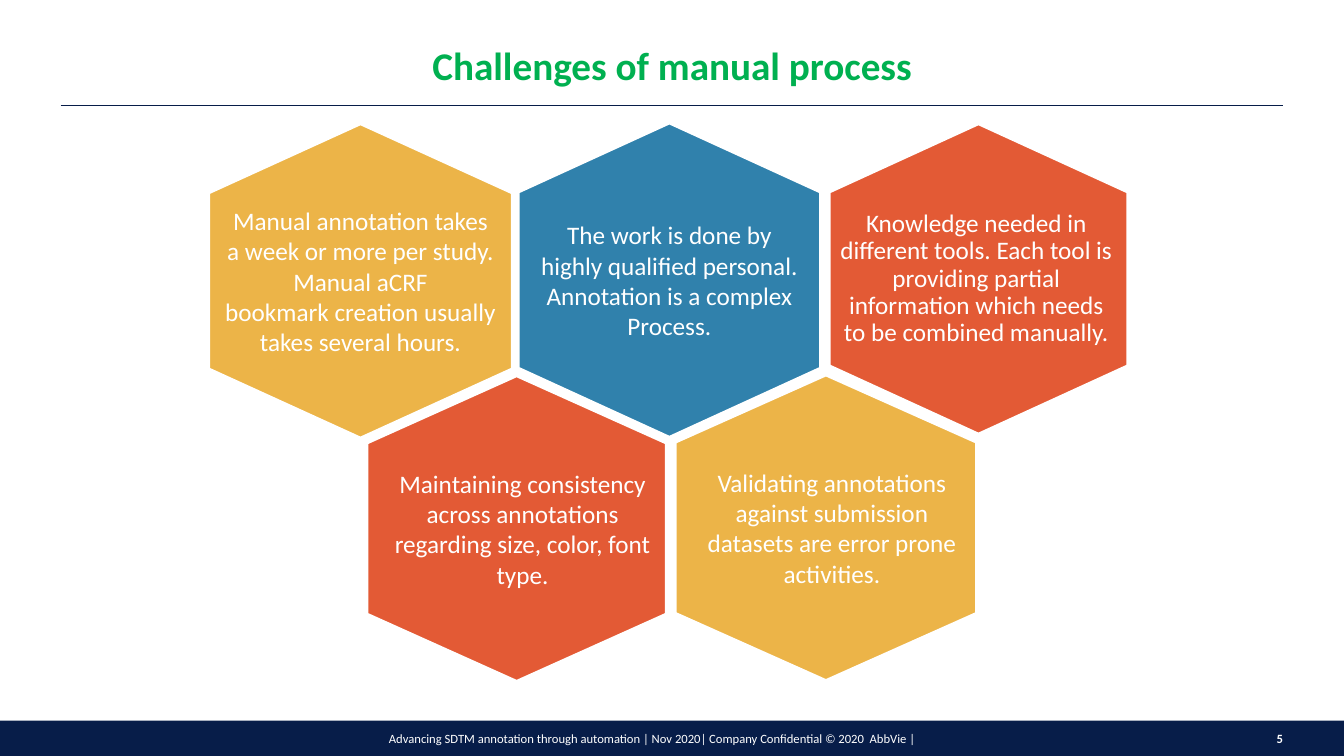
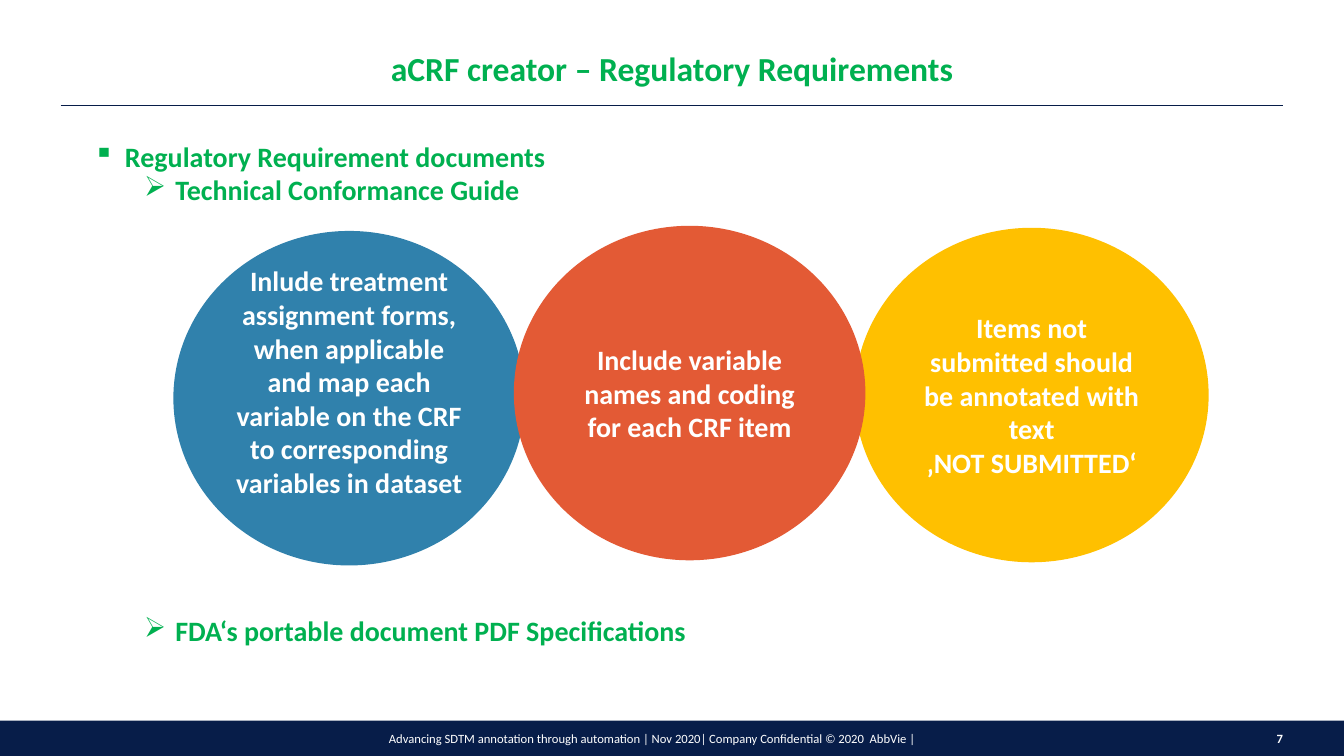
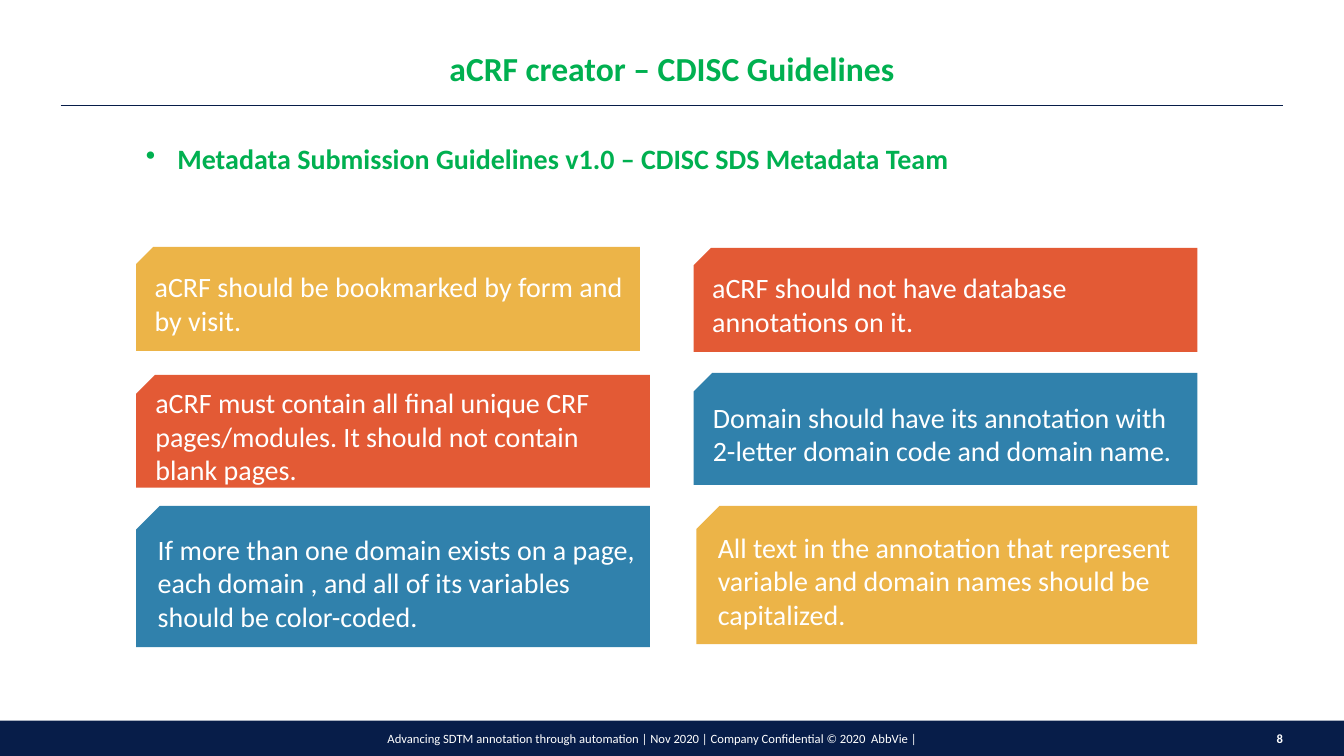
import pptx
import pptx.dml.color
import pptx.enum.shapes
import pptx.enum.text
import pptx.oxml.ns
import pptx.util
from lxml import etree

Cm = pptx.util.Cm
Pt = pptx.util.Pt
qn = pptx.oxml.ns.qn
Shape = pptx.enum.shapes.MSO_SHAPE
Align = pptx.enum.text.PP_ALIGN
Anchor = pptx.enum.text.MSO_ANCHOR

NAVY = "071D49"
GREEN = "00B050"
WHITE = "FFFFFF"
YELLOW = "ECB448"
AMBER = "FFC000"
BLUE = "3081AC"
RED = "E35A35"


def color(hex_value):
    return pptx.dml.color.RGBColor.from_string(hex_value)


def write_text(shape, lines, text_color, font, frame, paragraph_format):
    text_frame = shape.text_frame
    for name, value in {"word_wrap": True, **frame}.items():
        setattr(text_frame, name, value)
    for index, line in enumerate(lines):
        paragraph = text_frame.add_paragraph() if index else text_frame.paragraphs[0]
        for name, value in paragraph_format.items():
            setattr(paragraph, name, value)
        run = paragraph.add_run()
        run.text = line
        for name, value in {"name": "Calibri", **font}.items():
            setattr(run.font, name, value)
        run.font.color.rgb = color(text_color)


presentation = pptx.Presentation()
presentation.slide_width = Cm(33.87)
presentation.slide_height = Cm(19.05)
blank_layout = presentation.slide_layouts[6]

slide_heads = [
    ("Challenges of manual process", 28, "5", "Nov 2020|"),
    ("aCRF creator – Regulatory Requirements", 24, "7", "Nov 2020|"),
    ("aCRF creator – CDISC Guidelines", 24, "8", "Nov 2020 |"),
]
slides = []
for title, title_size, number, date in slide_heads:
    slide = presentation.slides.add_slide(blank_layout)
    slides.append(slide)

    band = slide.shapes.add_shape(Shape.RECTANGLE, 0, Cm(18.16), Cm(33.87), Cm(0.89))
    band.shadow.inherit = False
    band.fill.solid()
    band.fill.fore_color.rgb = color(NAVY)
    band.line.fill.background()

    rule = slide.shapes.add_connector(
        pptx.enum.shapes.MSO_CONNECTOR.STRAIGHT, Cm(1.53), Cm(2.66), Cm(32.34), Cm(2.66))
    rule.line.color.rgb = color(NAVY)
    rule.line.width = Pt(0.75)
    etree.SubElement(rule._element.spPr, qn("a:effectLst"))

    title_box = slide.shapes.add_textbox(Cm(5.38), Cm(0.33), Cm(23.11), Cm(2.03))
    write_text(title_box, [title], GREEN, {"size": Pt(title_size), "bold": True},
               {"vertical_anchor": Anchor.BOTTOM},
               {"alignment": Align.CENTER, "line_spacing": 0.9})

    number_box = slide.shapes.add_textbox(Cm(31.42), Cm(18.36), Cm(0.91), Cm(0.51))
    write_text(number_box, [number], WHITE, {"size": Pt(9), "bold": True},
               {"vertical_anchor": Anchor.MIDDLE, "margin_right": 0},
               {"alignment": Align.RIGHT})

    footer_box = slide.shapes.add_textbox(Cm(8.81), Cm(18.29), Cm(15.24), Cm(0.51))
    footer = f"Advancing SDTM annotation through automation | {date} Company Confidential © 2020  AbbVie |"
    write_text(footer_box, [footer], WHITE, {"size": Pt(9)}, {}, {"alignment": Align.CENTER})

challenges, requirements, guidelines = slides

hexagons = [
    (5.26, 3.12, 7.65, 7.92, YELLOW, 0.41, 0.41, 1.0,
     ["Manual annotation takes a week or more per study.",
      "Manual\u00a0aCRF bookmark\u00a0creation usually takes several hours."]),
    (13.06, 3.1, 7.62, 7.92, BLUE, 0.41, 0.41, 1.0,
     ["The work is done by highly qualified personal. Annotation is a complex Process."]),
    (20.9, 3.12, 7.52, 7.82, RED, 0.25, 0.36, 0.9,
     ["Knowledge needed in different tools. Each tool is providing partial information "
      "which needs to be combined manually."]),
    (17.02, 9.45, 7.59, 7.7, YELLOW, 0.71, 0.41, 1.0,
     ["Validating annotations against submission datasets are error prone activities."]),
    (9.25, 9.47, 7.54, 7.7, RED, 0.66, 0.36, 1.0,
     ["Maintaining consistency across annotations regarding size, color, font type."]),
]
for left, top, width, height, fill, margin_left, margin_right, spacing, lines in hexagons:
    middle, right, bottom = left + width / 2, left + width, top + height
    upper, lower = top + 0.22 * height, bottom - 0.22 * height
    corners = [(right, upper), (right, lower), (middle, bottom), (left, lower), (left, upper)]
    builder = challenges.shapes.build_freeform(Cm(middle), Cm(top))
    builder.add_line_segments([(Cm(x), Cm(y)) for x, y in corners], close=True)
    hexagon = builder.convert_to_shape()
    hexagon.shadow.inherit = False
    hexagon.fill.solid()
    hexagon.fill.fore_color.rgb = color(fill)
    hexagon.line.color.rgb = color(WHITE)
    hexagon.line.width = Pt(2)
    write_text(hexagon, lines, WHITE, {"size": Pt(18)},
               {"vertical_anchor": Anchor.MIDDLE, "margin_left": Cm(margin_left),
                "margin_right": Cm(margin_right)},
               {"alignment": Align.CENTER, "line_spacing": spacing})

circles = [
    (21.54, 5.74, 8.92, AMBER, 0.13,
     ["Items not submitted should be annotated with text", "‚NOT SUBMITTED‘"]),
    (4.37, 5.82, 8.86, BLUE, 0.97,
     ["Inlude treatment assignment forms, when applicable and map each variable on the CRF "
      "to corresponding variables in dataset"]),
    (12.95, 5.69, 8.86, RED, 0.13,
     ["Include variable names and coding for each CRF item"]),
]
for left, top, width, fill, margin_bottom, lines in circles:
    circle = requirements.shapes.add_shape(Shape.OVAL, Cm(left), Cm(top), Cm(width), Cm(8.43))
    circle.shadow.inherit = False
    circle.fill.solid()
    circle.fill.fore_color.rgb = color(fill)
    circle.line.fill.background()
    write_text(circle, lines, WHITE, {"size": Pt(20), "bold": True},
               {"vertical_anchor": Anchor.MIDDLE, "margin_bottom": Cm(margin_bottom)},
               {"alignment": Align.CENTER})

bullet_boxes = [
    (requirements, 2.11, 3.38, 1.96,
     [("▪", 0, "Regulatory Requirement documents"), ("➢", 1, "Technical Conformance Guide")]),
    (requirements, 2.11, 15.34, 1.1,
     [("➢", 1, "FDA‘s portable document PDF Specifications")]),
    (guidelines, 3.43, 3.45, 1.1,
     [("•", 0, "Metadata Submission Guidelines v1.0 – CDISC SDS Metadata Team")]),
]
for slide, left, top, height, items in bullet_boxes:
    bullet_box = slide.shapes.add_textbox(Cm(left), Cm(top), Cm(24.03), Cm(height))
    write_text(bullet_box, [text for _, _, text in items], GREEN,
               {"size": Pt(20), "bold": True}, {}, {"alignment": Align.LEFT})
    for paragraph, (bullet, level, _) in zip(bullet_box.text_frame.paragraphs, items):
        paragraph.level = level
        properties = paragraph._p.get_or_add_pPr()
        properties.set("marL", str(Cm(0.79 + 1.27 * level)))
        properties.set("indent", str(Cm(-0.79)))
        etree.SubElement(properties, qn("a:buChar")).set("char", bullet)

cards = [
    (3.43, 6.22, 12.7, 2.62, YELLOW, "aCRF should be bookmarked by form and by visit."),
    (17.48, 6.25, 12.7, 2.62, RED, "aCRF should not have database annotations on it."),
    (3.43, 9.45, 12.95, 2.84, RED,
     "aCRF must contain all final unique CRF pages/modules. It should not contain blank pages."),
    (17.48, 9.4, 12.7, 2.82, BLUE,
     "Domain should have its annotation with 2-letter domain code and domain name."),
    (3.43, 12.75, 12.95, 3.56, BLUE,
     "If more than one domain exists on a page, each domain , and all of its variables "
     "should be color-coded."),
    (17.55, 12.75, 12.62, 3.48, YELLOW,
     "All text in the annotation that represent variable and domain names should be capitalized."),
]
for left, top, width, height, fill, text in cards:
    card = guidelines.shapes.add_shape(
        Shape.SNIP_1_RECTANGLE, Cm(left), Cm(top), Cm(width), Cm(height))
    card._element.spPr.xfrm.set("flipH", "1")
    card.shadow.inherit = False
    card.fill.solid()
    card.fill.fore_color.rgb = color(fill)
    card.line.fill.background()
    write_text(card, [text], WHITE, {"size": Pt(20)},
               {"vertical_anchor": Anchor.MIDDLE}, {"alignment": Align.LEFT})

presentation.save("out.pptx")
